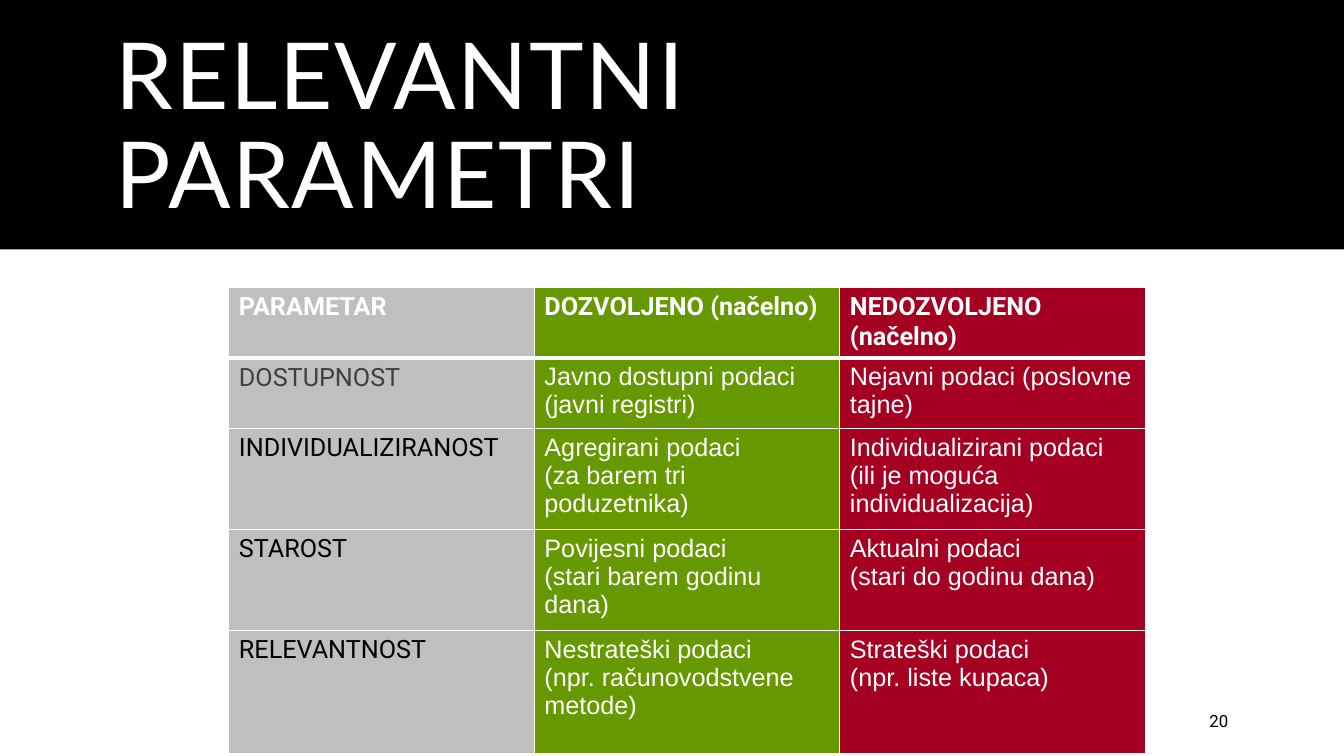
from lxml import etree
from pptx import Presentation
from pptx import util as u
from pptx.dml.color import RGBColor
from pptx.enum import shapes, text
from pptx.oxml import ns

# Content
TITLE = "RELEVANTNI PARAMETRI"
PAGE = "20"
ROWS = [
    ("PARAMETAR", "DOZVOLJENO (načelno)", "NEDOZVOLJENO (načelno)"),
    ("DOSTUPNOST", "Javno dostupni podaci (javni registri)",
     "Nejavni podaci (poslovne tajne)"),
    ("INDIVIDUALIZIRANOST", "Agregirani podaci\v(za barem tri poduzetnika)",
     "Individualizirani podaci\v(ili je moguća individualizacija)"),
    ("STAROST", "Povijesni podaci\v(stari barem godinu dana)",
     "Aktualni podaci\v(stari do godinu dana)"),
    ("RELEVANTNOST", "Nestrateški podaci\v(npr. računovodstvene metode)",
     "Strateški podaci\v(npr. liste kupaca)"),
]


class Theme:
    white, black, grey = "FFFFFF", "000000", "404040"
    columns = ("BFBFBF", "669900", "A50021")
    title_font, label_font, body_font = "Lato", "Roboto", "Arial"
    title_size, table_size, page_size = 66, 18, 12
    rule, header_rule = 1, 3


# Layout in inches
WIDTH, HEIGHT = 13.33, 7.5
BAND_HEIGHT = HEIGHT * 0.33
MARGIN = 1.05
TABLE_LEFT, TABLE_TOP, COL_WIDTH = 2.27, 2.85, 3.03
ROW_HEIGHTS = (0.68, 0.66, 0.94, 0.95, 1.22)


def box(*lengths):
    return [u.Inches(n) for n in lengths]


def style(p, font, size, color, bold=False):
    for r in p.runs:
        r.font.name, r.font.size, r.font.bold = font, u.Pt(size), bold
        r.font.color.rgb = RGBColor.from_string(color)


def add_border(cell, side, width):
    ln = etree.SubElement(cell._tc.get_or_add_tcPr(), ns.qn(f"a:ln{side}"),
                          w=str(u.Pt(width)))
    fill = etree.SubElement(ln, ns.qn("a:solidFill"))
    etree.SubElement(fill, ns.qn("a:srgbClr"), val=Theme.white)


def add_title(slide):
    band = slide.shapes.add_shape(shapes.MSO_SHAPE.RECTANGLE,
                                  *box(0, 0, WIDTH, BAND_HEIGHT))
    band.shadow.inherit = False
    band.fill.solid()
    band.fill.fore_color.rgb = RGBColor.from_string(Theme.black)
    band.line.fill.background()
    slide.shapes._spTree.insert(2, band._element)  # behind the title

    sp = slide.shapes.title
    sp.left, sp.top, sp.width, sp.height = box(MARGIN, 0.35, WIDTH - 2 * MARGIN, 1.86)
    tf = sp.text_frame
    tf.text = TITLE
    tf.auto_size = text.MSO_AUTO_SIZE.NONE
    tf.vertical_anchor = text.MSO_ANCHOR.MIDDLE
    tf.margin_right = u.Inches(0.5)
    p = tf.paragraphs[0]
    p.alignment, p.line_spacing = text.PP_ALIGN.LEFT, 0.9
    style(p, Theme.title_font, Theme.title_size, Theme.white)
    p.runs[0].font._element.set("spc", "120")


def add_parameters(slide):
    table = slide.shapes.add_table(
        len(ROWS), len(ROWS[0]),
        *box(TABLE_LEFT, TABLE_TOP, COL_WIDTH * 3, sum(ROW_HEIGHTS))).table
    for col in table.columns:
        col.width = u.Inches(COL_WIDTH)
    for i, row in enumerate(ROWS):
        table.rows[i].height = u.Inches(ROW_HEIGHTS[i])
        for j, words in enumerate(row):
            cell = table.cell(i, j)
            cell.text_frame.text = words
            p = cell.text_frame.paragraphs[0]
            header, label = i == 0, j == 0
            if header or not label:
                color = Theme.white
            else:
                color = Theme.grey if i == 1 else Theme.black
            font = Theme.label_font if header or label else Theme.body_font
            style(p, font, Theme.table_size, color, header)
            if i == 1 and not label:
                p.space_before, p.space_after = u.Pt(1.2), u.Pt(6)
            for side in "LRTB":
                thick = (i, side) in ((0, "B"), (1, "T"))
                add_border(cell, side, Theme.header_rule if thick else Theme.rule)
            cell.fill.solid()
            cell.fill.fore_color.rgb = RGBColor.from_string(Theme.columns[j])


def add_page_number(slide):
    tf = slide.shapes.add_textbox(*box(WIDTH - MARGIN - 1.02, 6.95, 1.02, 0.4)).text_frame
    tf.word_wrap = True
    tf.vertical_anchor = text.MSO_ANCHOR.MIDDLE
    tf.text = PAGE
    p = tf.paragraphs[0]
    p.alignment = text.PP_ALIGN.RIGHT
    style(p, Theme.label_font, Theme.page_size, Theme.black)


def main():
    prs = Presentation()
    prs.slide_width, prs.slide_height = box(WIDTH, HEIGHT)
    slide = prs.slides.add_slide(prs.slide_layouts[5])  # title only
    add_title(slide)
    add_page_number(slide)
    add_parameters(slide)
    prs.save("out.pptx")


if __name__ == "__main__":
    main()
